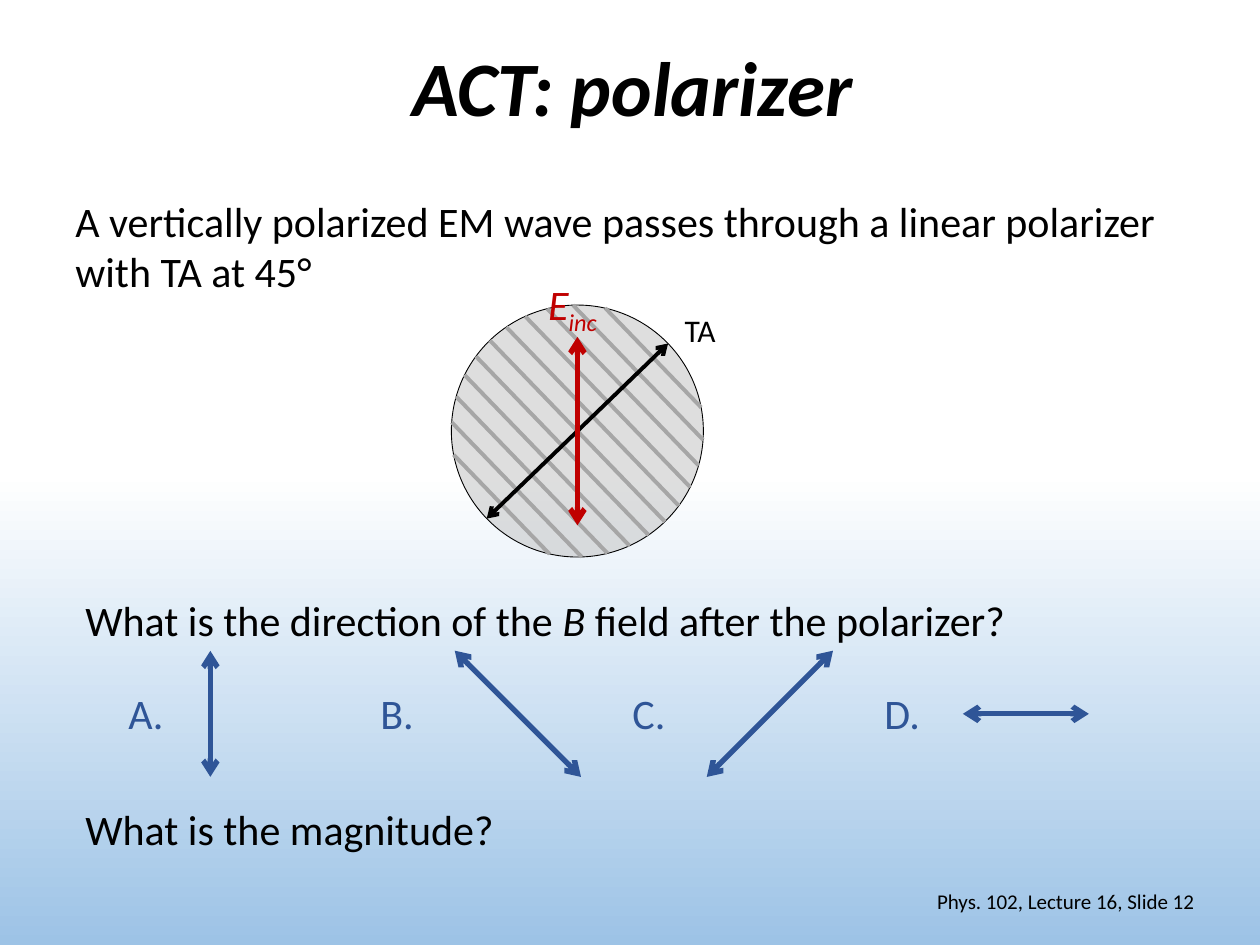
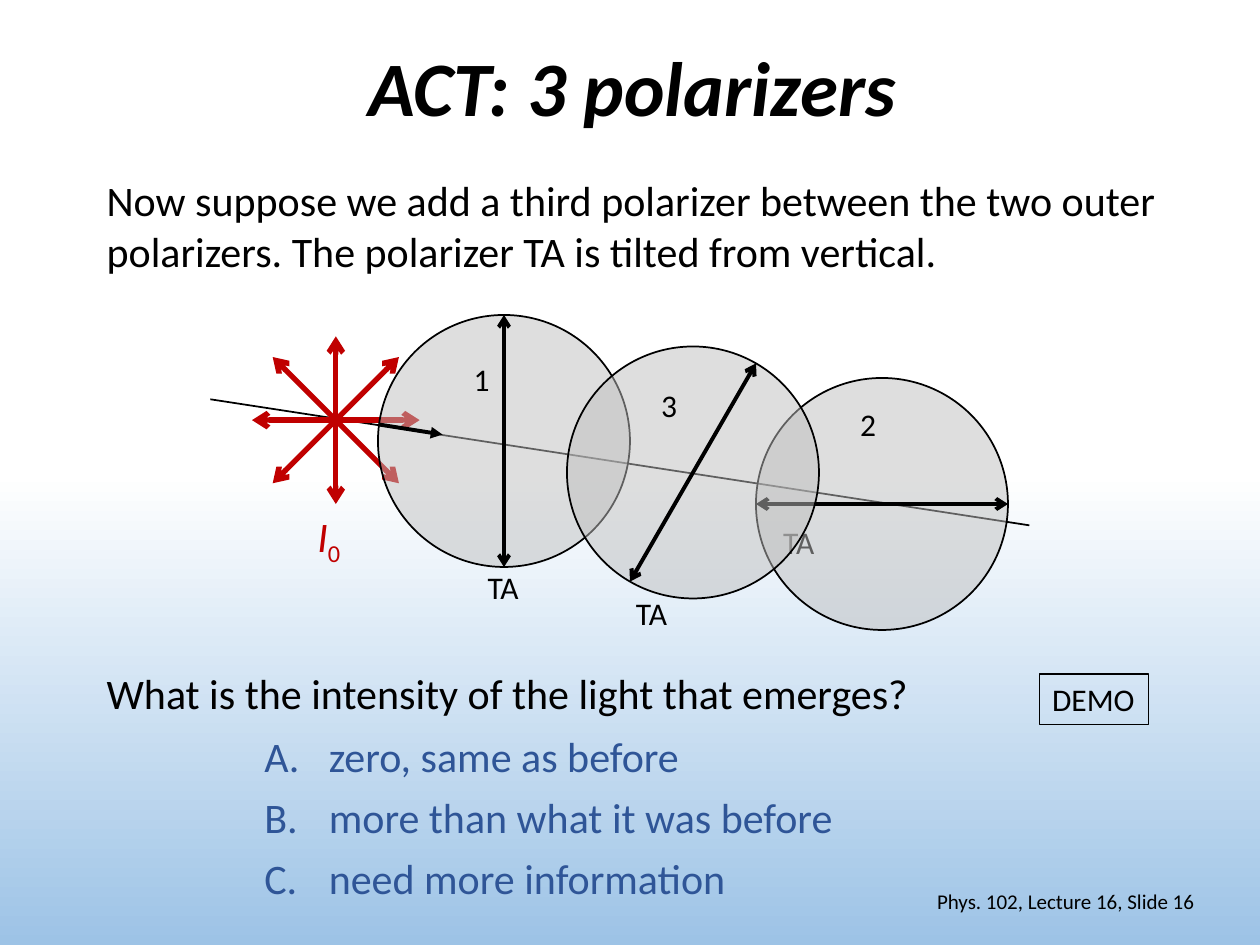
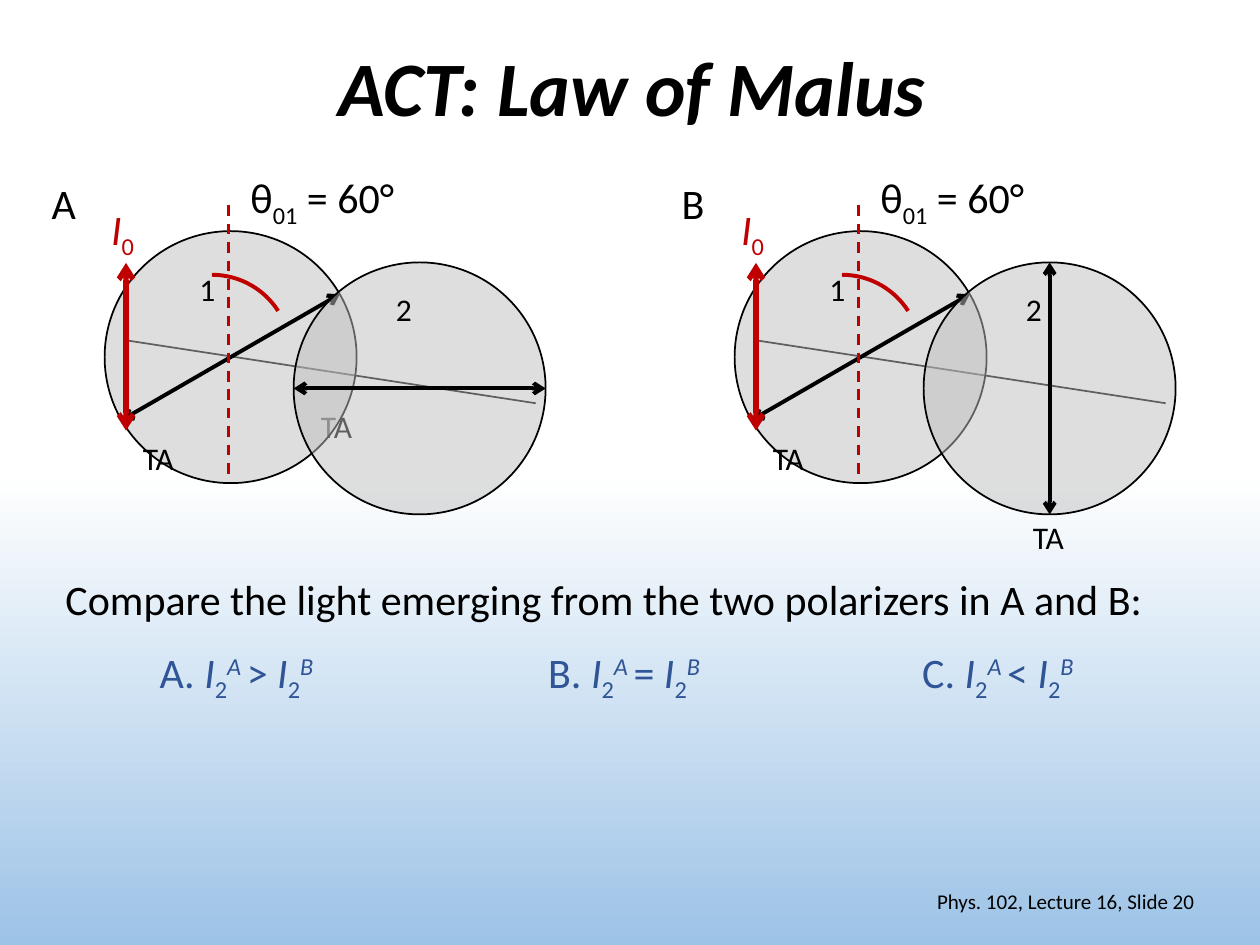
from dataclasses import dataclass
from math import cos, radians, sin, sqrt

from lxml import etree
from pptx import Presentation
from pptx.dml.color import RGBColor
from pptx.enum.dml import MSO_LINE
from pptx.enum.shapes import MSO_CONNECTOR, MSO_SHAPE
from pptx.enum.text import MSO_ANCHOR, PP_ALIGN
from pptx.oxml.ns import qn
from pptx.slide import Slide
from pptx.util import Cm, Pt

STRAIGHT = MSO_CONNECTOR.STRAIGHT
OVAL, ARC = MSO_SHAPE.OVAL, MSO_SHAPE.ARC
DASH = MSO_LINE.DASH
TOP, MIDDLE = MSO_ANCHOR.TOP, MSO_ANCHOR.MIDDLE
LEFT, CENTER, RIGHT = PP_ALIGN.LEFT, PP_ALIGN.CENTER, PP_ALIGN.RIGHT

BLACK, WHITE, RED, BLUE = "000000", "FFFFFF", "C00000", "2F5597"
LENS, HATCH, SKY = "BFBFBF", "A6A6A6", "9DC3E6"
FONT = "Calibri"
RADIUS = 2.54
BOTH_ENDS = {"headEnd": "arrow", "tailEnd": "arrow"}
# style name: (italic, baseline in 1/1000 percent)
STYLES = {"": (False, 0), "i": (True, 0), "sub": (False, -25000),
          "isub": (True, -25000), "isup": (True, 30000)}
I_ZERO = [("I", "i"), ("0", "sub")]


def rgb(value):
    return RGBColor.from_string(value)


def add_runs(p, runs, size, color, **extra):
    """Add a string, or (text, style name) pairs, to a paragraph."""
    for text, style in [(runs, "")] if isinstance(runs, str) else runs:
        r = p.add_run()
        r.text = text
        italic, baseline = STYLES[style]
        fmt = {"name": FONT, "size": Pt(size), "italic": italic, **extra}
        for name, value in fmt.items():
            setattr(r.font, name, value)
        r.font.color.rgb = rgb(color)
        if baseline:
            r.font._element.set("baseline", str(baseline))


def ray_ends(cx, cy, radius, tilt):
    """Ends of a diameter tilted clockwise from vertical, in degrees."""
    dx, dy = radius * sin(radians(tilt)), radius * cos(radians(tilt))
    return (cx - dx, cy + dy), (cx + dx, cy - dy)


@dataclass
class Region:
    """Part of a slide; positions are in cm from its top left corner."""
    slide: Slide
    left: float = 0
    top: float = 0

    def box(self, x, y, w, h):
        return Cm(self.left + x), Cm(self.top + y), Cm(w), Cm(h)

    def text(self, x, y, w, runs, size=24, color=BLACK, h=1.27,
             align=LEFT, anchor=TOP, wrap=True):
        sp = self.slide.shapes.add_textbox(*self.box(x, y, w, h))
        tf = sp.text_frame
        tf.word_wrap, tf.vertical_anchor = wrap, anchor
        p = tf.paragraphs[0]
        p.alignment = align
        add_runs(p, runs, size, color)
        return sp

    def label(self, x, y, text):
        return self.text(x, y, 1.3, text, size=18, h=1.02)

    def line(self, start, end, color=BLACK, width=2.25, ends=None, dash=None):
        points = [Cm(v) for x, y in (start, end)
                  for v in (self.left + x, self.top + y)]
        sp = self.slide.shapes.add_connector(STRAIGHT, *points)
        sp.line.color.rgb = rgb(color)
        sp.line.width = Pt(width)
        if dash:
            sp.line.dash_style = dash
        ln = sp.line._get_or_add_ln()
        for tag, kind in (ends or {}).items():
            etree.SubElement(ln, qn(f"a:{tag}"), type=kind)
        etree.SubElement(sp._element.spPr, qn("a:effectLst"))

    def ray(self, cx, cy, radius, tilt, color=RED, width=3):
        self.line(*ray_ends(cx, cy, radius, tilt), color, width, BOTH_ENDS)

    def disc(self, cx, cy, width=1):
        sp = self.slide.shapes.add_shape(OVAL, *self.box(
            cx - RADIUS, cy - RADIUS, 2 * RADIUS, 2 * RADIUS))
        sp.shadow.inherit = False
        sp.fill.solid()
        sp.fill.fore_color.rgb = rgb(LENS)
        clr = sp._element.spPr.find(qn("a:solidFill"))[0]
        etree.SubElement(clr, qn("a:alpha"), val="50000")
        sp.line.color.rgb = rgb(BLACK)
        sp.line.width = Pt(width)

    def polarizer(self, cx, cy, tilt):
        """Disc with its transmission axis."""
        self.disc(cx, cy)
        self.ray(cx, cy, RADIUS, tilt, BLACK, 2.25)

    def angle_mark(self, x, y, size):
        sp = self.slide.shapes.add_shape(ARC, *self.box(x, y, size, size))
        sp.shadow.inherit = False
        sp.adjustments[0], sp.adjustments[1] = 162, 196.39
        sp.fill.background()
        sp.line.color.rgb = rgb(RED)
        sp.line.width = Pt(2.25)


def set_background(master):
    fill = master.background.fill
    fill.gradient()
    fill.gradient_angle = 270
    for stop, color, position in zip(fill.gradient_stops, (WHITE, SKY), (0.5, 1)):
        stop.color.rgb = rgb(color)
        stop.position = position


def new_slide(prs, title, number):
    slide = prs.slides.add_slide(prs.slide_layouts[5])
    sp = slide.shapes.title
    place = {"left": 1.8, "top": 0, "width": 21.9, "height": 3.68}
    for name, value in place.items():
        setattr(sp, name, Cm(value))
    sp.text_frame.vertical_anchor = MIDDLE
    p = sp.text_frame.paragraphs[0]
    p.alignment, p.line_spacing = CENTER, 0.9
    add_runs(p, [(title, "i")], 44, BLACK, bold=True)
    page = Region(slide)
    page.text(17.93, 17.65, 6.4, f"Phys. 102, Lecture 16, Slide {number}",
              size=12, h=1.02, align=RIGHT, anchor=MIDDLE)
    return page


def hatched_polarizer(area, tilt=46, lines=11, gap=0.425):
    c = RADIUS
    area.disc(c, c, 0.5)
    for i in range(lines):
        offset = (lines // 2 - i) * gap
        _, (x, y) = ray_ends(c, c, offset, tilt)
        half = sqrt(RADIUS ** 2 - offset ** 2)
        area.line(*ray_ends(x, y, half, tilt - 90), HATCH)
    area.ray(c, c, RADIUS, tilt, BLACK, 2.25)
    area.ray(c, c, 1.9, 0)
    area.text(1.7, -0.66, 1.8, [("E", "i"), ("inc", "isub")], color=RED)
    area.label(4.45, 0, "TA")


def direction_choices(area, pitch=5.08):
    arrows = [(1.9, 1.27, 0), (3.02, 1.8, -45), (3.02, 1.8, 45), (3.1, 1.27, 90)]
    for i, (x, radius, tilt) in enumerate(arrows):
        area.text(i * pitch, 0, 1.5, f"{'ABCD'[i]}.", color=BLUE)
        area.ray(i * pitch + x, 0.65, radius, tilt, BLUE)


def three_polarizers(area):
    area.line((0, 1.7), (16.51, 4.24), width=1)
    for x, y in [(11.3, 4.06), (5.34, 4.98), (8.33, 5.51)]:
        area.label(x, y, "TA")
    for radius, tilt in [(1.69, 0), (1.69, 90), (1.8, -45), (1.8, 45)]:
        area.ray(2.53, 2.12, radius, tilt)
    for place, tilt in [(0, 0), (2, 90), (1, 30)]:
        area.polarizer(5.92 + place * 3.81, 2.54 + place * 0.635, tilt)
    for number, x, y in [("1", 5.06, 0.79), ("3", 8.84, 1.3), ("2", 12.85, 1.7)]:
        area.label(x, y, number)
    area.text(1.91, 3.81, 1.2, I_ZERO, color=RED)
    area.line((3.41, 2.21), (4.68, 2.41), ends={"tailEnd": "triangle"})


def numbered_list(area, items):
    tf = area.text(0, 0, 12.7, items[0], color=BLUE, h=3.76).text_frame
    for item in items[1:]:
        add_runs(tf.add_paragraph(), item, 24, BLUE)
    for p in tf.paragraphs:
        p.space_after = Pt(6)
        pPr = p._p.get_or_add_pPr()
        pPr.set("marL", str(Cm(1.3)))
        pPr.set("indent", str(-Cm(1.3)))
        etree.SubElement(pPr, qn("a:buAutoNum"), type="alphaUcPeriod")


def malus_panel(area, letter, second_tilt, second_label):
    area.line((2.54, 3.56), (10.8, 4.83), width=1)
    area.label(*second_label, "TA")
    area.polarizer(4.65, 3.9, 60)
    area.polarizer(8.46, 4.53, second_tilt)
    area.line((4.61, 0.84), (4.61, 6.3), RED, 1.5, dash=DASH)
    area.ray(2.54, 3.69, 1.69, 0)
    area.angle_mark(2.69, 2.24, 3.17)
    area.label(2.63, 5.42, "TA")
    area.label(3.77, 2.01, "1")
    area.label(7.73, 2.42, "2")
    area.text(1.99, 0.67, 1.2, I_ZERO, color=RED)
    area.text(4.8, 0.04, 4, [("θ", ""), ("01", "sub"), (" = 60°", "")])
    area.text(0.79, 0.15, 1.2, letter)


def intensity_choices(area):
    for letter, sign, x in zip("ABC", ">=<", (0, 7.83, 15.37)):
        area.text(x, 0, 4.5, [
            (f"{letter}. ", ""), ("I", "i"), ("2", "sub"), ("A ", "isup"),
            (f"{sign} ", ""), ("I", "i"), ("2", "sub"), ("B", "isup")], color=BLUE)


def polarizer_slide(prs):
    page = new_slide(prs, "ACT: polarizer", 12)
    page.text(1.27, 3.81, 22.66, "A vertically polarized EM wave passes through "
              "a linear polarizer with TA at 45°", h=2.31)
    hatched_polarizer(Region(page.slide, 9.1, 6.15))
    page.text(1.47, 11.86, 20, [("What is the direction of the ", ""), ("B", "i"),
                                (" field after the polarizer?", "")])
    direction_choices(Region(page.slide, 2.34, 13.74))
    page.text(1.47, 16.08, 10, "What is the magnitude?")


def three_polarizers_slide(prs):
    page = new_slide(prs, "ACT: 3 polarizers", 16)
    page.text(1.9, 3.4, 21.8, "Now suppose we add a third polarizer between the two "
              "outer polarizers. The polarizer TA is tilted from vertical.", h=2.31)
    three_polarizers(Region(page.slide, 4.24, 6.35))
    page.text(1.9, 13.34, 18, "What is the intensity of the light that emerges?")
    demo = page.text(20.96, 13.59, 2.2, "DEMO", size=18, h=1.02, wrap=False)
    demo.line.color.rgb = rgb(BLACK)
    demo.line.width = Pt(0.75)
    numbered_list(Region(page.slide, 5.08, 14.6), [
        "zero, same as before", "more than what it was before",
        "need more information"])


def malus_slide(prs):
    page = new_slide(prs, "ACT: Law of Malus", 20)
    malus_panel(Region(page.slide, 0, 3.3), "A", 90, (6.22, 4.78))
    malus_panel(Region(page.slide, 12.7, 3.3), "B", 0, (7.87, 7.01))
    page.text(1.07, 11.43, 22.66,
              "Compare the light emerging from the two polarizers in A and B:")
    intensity_choices(Region(page.slide, 2.97, 12.9))


def main():
    prs = Presentation()
    prs.slide_width, prs.slide_height = Cm(25.4), Cm(19.05)
    set_background(prs.slide_master)
    polarizer_slide(prs)
    three_polarizers_slide(prs)
    malus_slide(prs)
    prs.save("out.pptx")


if __name__ == "__main__":
    main()
